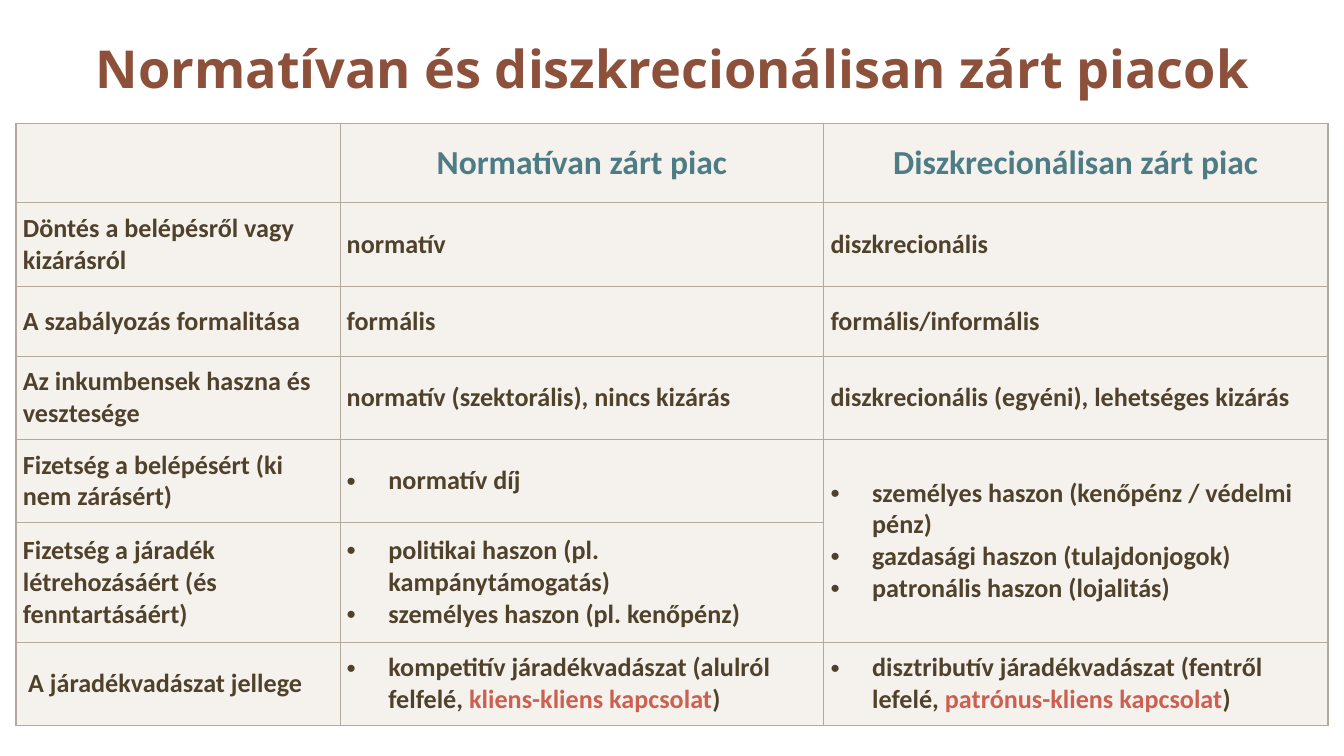
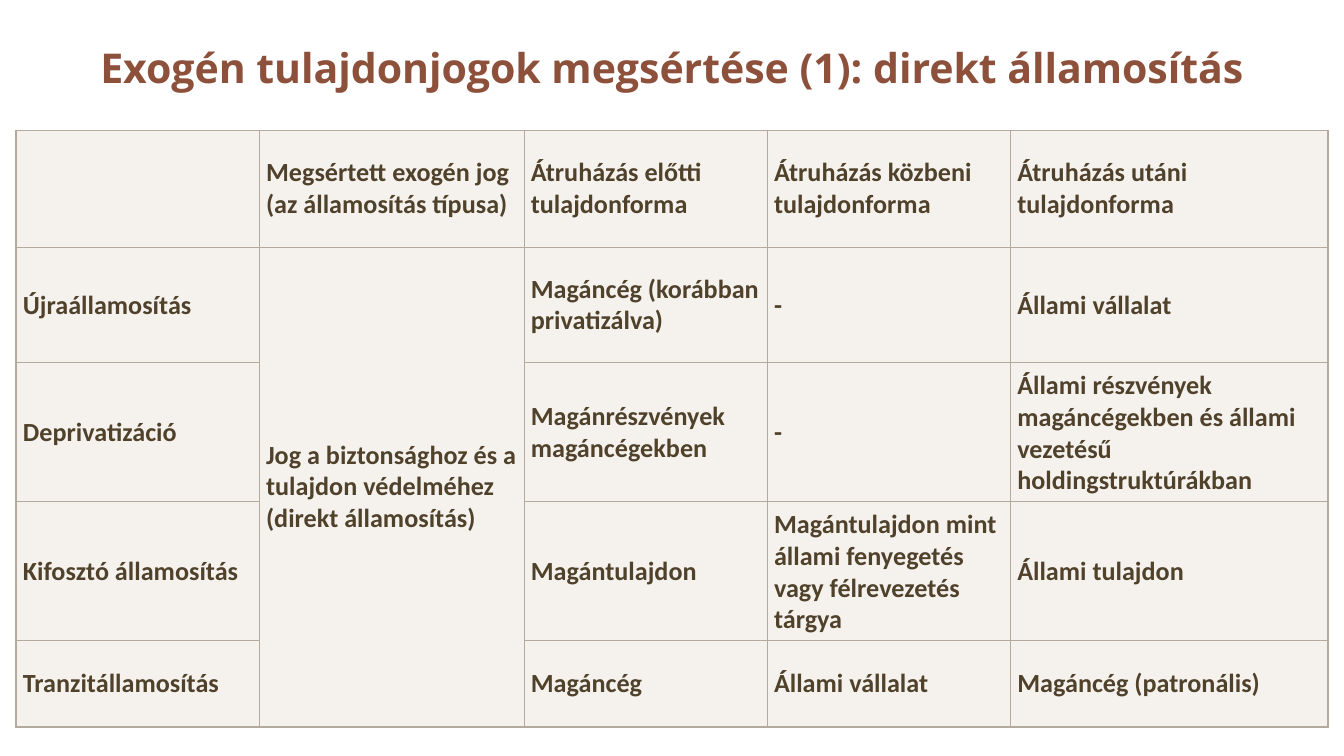
from lxml import etree
from pptx import Presentation
from pptx import util as u
from pptx.dml.color import RGBColor
from pptx.enum import text
from pptx.oxml.ns import qn

COLORS = {
    "title": "8D503B",
    "heading": "4D7C85",
    "body": "50412B",
    "accent": "CD5F50",
    "fill": "EFEAE4",
    "border": "B3A99D",
}
TITLE_FONT = "Open Sans"
BODY_FONT = "Calibri"
LEFT, WIDTH = 0.12, 9.76
CELL_MARGIN = 0.05
FILL_ALPHA = 60000
THIN, THICK = 0.5, 1

MARKETS = [
    ["", "Normatívan zárt piac", "Diszkrecionálisan zárt piac"],
    ["Döntés a belépésről vagy kizárásról", "normatív", "diszkrecionális"],
    ["A szabályozás formalitása", "formális", "formális/informális"],
    ["Az inkumbensek haszna és vesztesége", "normatív (szektorális), nincs kizárás",
     "diszkrecionális (egyéni), lehetséges kizárás"],
    ["Fizetség a belépésért (ki nem zárásért)", ["normatív díj"],
     ["személyes haszon (kenőpénz / védelmi pénz)",
      "gazdasági haszon (tulajdonjogok)",
      "patronális haszon (lojalitás)"]],
    ["Fizetség a járadék létrehozásáért (és fenntartásáért)",
     ["politikai haszon (pl. kampánytámogatás)", "személyes haszon (pl. kenőpénz)"], ""],
    ["A járadékvadászat jellege",
     ["kompetitív járadékvadászat (alulról felfelé, |kliens-kliens kapcsolat|)"],
     ["disztributív járadékvadászat (fentről lefelé, |patrónus-kliens kapcsolat|)"]],
]

NATIONALIZATION = [
    ["", "Megsértett exogén jog (az államosítás típusa)", "Átruházás előtti tulajdonforma",
     "Átruházás közbeni tulajdonforma", "Átruházás utáni tulajdonforma"],
    ["Újraállamosítás", "Jog a biztonsághoz és a tulajdon védelméhez (direkt államosítás)",
     "Magáncég (korábban privatizálva)", "-", "Állami vállalat"],
    ["Deprivatizáció", "", "Magánrészvények magáncégekben", "-",
     "Állami részvények magáncégekben és állami vezetésű holdingstruktúrákban"],
    ["Kifosztó államosítás", "", "Magántulajdon",
     "Magántulajdon mint állami fenyegetés vagy félrevezetés tárgya", "Állami tulajdon"],
    ["Tranzitállamosítás", "", "Magáncég", "Állami vállalat", "Magáncég (patronális)"],
]


def add_bullet(paragraph):
    properties = paragraph._p.get_or_add_pPr()
    properties.set("marL", str(u.Inches(0.31)))
    properties.set("indent", str(u.Inches(-0.31)))
    etree.SubElement(properties, qn("a:buFont"), typeface="Arial")
    etree.SubElement(properties, qn("a:buChar"), char="•")
    tabs = etree.SubElement(properties, qn("a:tabLst"))
    etree.SubElement(tabs, qn("a:tab"), pos=str(u.Inches(0.5)), algn="l")


def write_text(frame, content, size=14, font=BODY_FONT, color="body", align=text.PP_ALIGN.LEFT):
    bulleted = isinstance(content, list)
    for index, line in enumerate(content if bulleted else [content]):
        paragraph = frame.add_paragraph() if index else frame.paragraphs[0]
        paragraph.alignment = align
        if bulleted:
            add_bullet(paragraph)
        for part, words in enumerate(line.split("|")):
            run = paragraph.add_run()
            run.text = words
            run.font.size = u.Pt(size)
            run.font.name = font
            run.font.bold = True
            run.font.color.rgb = RGBColor.from_string(COLORS["accent" if part % 2 else color])


def add_title(slide, words, size):
    box = slide.shapes.add_textbox(u.Inches(LEFT), 0, u.Inches(WIDTH), u.Inches(1))
    frame = box.text_frame
    frame.word_wrap = True
    frame.vertical_anchor = text.MSO_ANCHOR.MIDDLE
    write_text(frame, words, size=size, font=TITLE_FONT, color="title", align=text.PP_ALIGN.CENTER)


def style_cell(cell, outer_sides):
    cell.vertical_anchor = text.MSO_ANCHOR.MIDDLE
    cell.margin_left = cell.margin_right = u.Inches(CELL_MARGIN)
    cell.margin_top = cell.margin_bottom = u.Inches(CELL_MARGIN)
    cell.fill.solid()
    cell.fill.fore_color.rgb = RGBColor.from_string(COLORS["fill"])
    properties = cell._tc.get_or_add_tcPr()
    fill_color = properties.find(".//" + qn("a:srgbClr"))
    etree.SubElement(fill_color, qn("a:alpha"), val=str(FILL_ALPHA))
    for index, side in enumerate("LRTB"):
        width = u.Pt(THICK if side in outer_sides else THIN)
        line = etree.Element(qn("a:ln" + side), w=str(width))
        solid = etree.SubElement(line, qn("a:solidFill"))
        etree.SubElement(solid, qn("a:srgbClr"), val=COLORS["border"])
        properties.insert(index, line)


def add_grid(slide, rows, top, height, widths, heights, merge, heading):
    frame = slide.shapes.add_table(len(rows), len(widths), u.Inches(LEFT), u.Inches(top),
                                   u.Inches(WIDTH), u.Inches(height))
    table = frame.table
    table.first_row = table.horz_banding = False
    for column, width in zip(table.columns, widths):
        column.width = u.Inches(width)
    for row, row_height in zip(table.rows, heights):
        row.height = u.Inches(row_height)
    frame.width = u.Inches(WIDTH)
    frame.height = u.Inches(height)
    first, last, merged_column = merge
    table.cell(first, merged_column).merge(table.cell(last, merged_column))
    for i, row in enumerate(rows):
        for j, content in enumerate(row):
            cell = table.cell(i, j)
            bottom = last if (i, j) == (first, merged_column) else i
            edges = {"L": j == 0, "R": j == len(widths) - 1,
                     "T": i == 0, "B": bottom == len(rows) - 1}
            style_cell(cell, [side for side, outer in edges.items() if outer])
            if content:
                write_text(cell.text_frame, content, **(heading if i == 0 else {}))
    return table


def main():
    presentation = Presentation()
    presentation.slide_width = u.Inches(10)
    presentation.slide_height = presentation.slide_width * 9 // 16
    blank = presentation.slide_layouts[6]

    slide = presentation.slides.add_slide(blank)
    add_title(slide, "Normatívan és diszkrecionálisan zárt piacok", 28)
    markets = add_grid(slide, MARKETS, 0.92, 4.49, [2.41, 3.6, 3.75],
                       [0.59, 0.62, 0.52, 0.62, 0.62, 0.89, 0.62], merge=(4, 5, 2),
                       heading={"size": 18, "color": "heading", "align": text.PP_ALIGN.CENTER})
    markets.cell(6, 0).margin_left = u.Inches(0.09)

    slide = presentation.slides.add_slide(blank)
    add_title(slide, "Exogén tulajdonjogok megsértése (1): direkt államosítás", 22)
    add_grid(slide, NATIONALIZATION, 0.97, 4.44, [1.81, 1.97, 1.81, 1.81, 2.36],
             [0.87, 0.86, 0.89, 0.89, 0.64], merge=(1, 4, 1), heading={})

    presentation.save("out.pptx")


if __name__ == "__main__":
    main()
